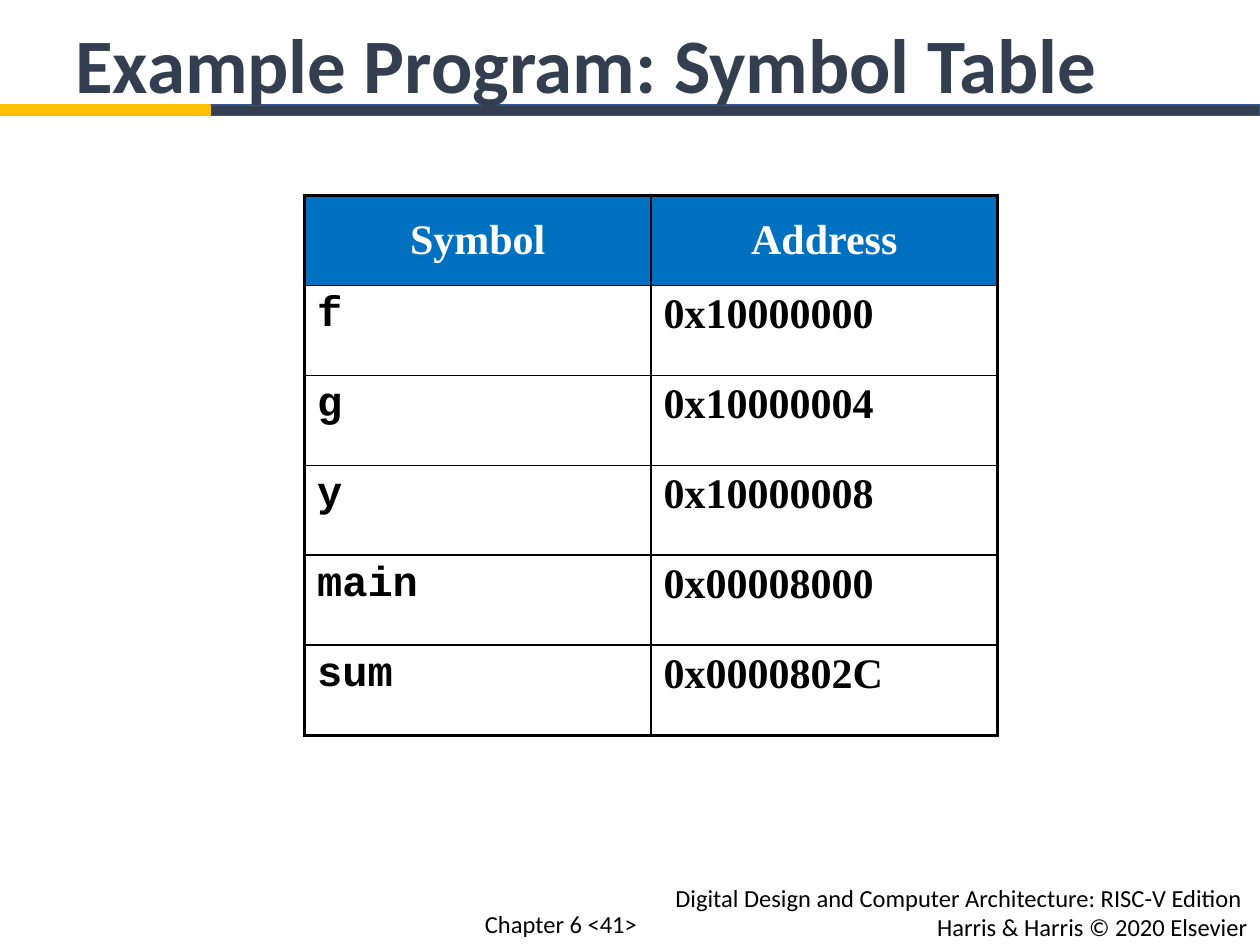
"""Build the symbol table slide of the example program."""
from lxml.etree import SubElement
from pptx import Presentation
from pptx.dml.color import RGBColor
from pptx.enum.shapes import MSO_SHAPE
from pptx.enum.text import MSO_ANCHOR as ANCHOR, PP_ALIGN as ALIGN
from pptx.oxml.ns import qn
from pptx.util import Inches, Pt

WHITE = RGBColor(0xFF, 0xFF, 0xFF)
BLACK = RGBColor(0x00, 0x00, 0x00)
SLATE = RGBColor(0x33, 0x3F, 0x50)
NAVY = RGBColor(0x32, 0x54, 0x91)
GOLD = RGBColor(0xFF, 0xC0, 0x00)
BLUE = RGBColor(0x00, 0x70, 0xC0)

prs = Presentation()
prs.slide_width, prs.slide_height = Inches(10), Inches(7.5)
COL, ROW = prs.slide_width / 120, prs.slide_height / 90
s = prs.slides.add_slide(prs.slide_layouts[6])


def grid(x, y, w, h):
    return int(x * COL), int(y * ROW), int(w * COL), int(h * ROW)


def write(tf, text, size=14, font="Calibri", color=BLACK, bold=False, align=ALIGN.LEFT, indent=0):
    tf.word_wrap = True
    for i, line in enumerate(text.split("\n")):
        p = tf.add_paragraph() if i else tf.paragraphs[0]
        p.alignment = align
        if indent:
            p._p.get_or_add_pPr().set("marL", str(Inches(indent)))
        r = p.add_run()
        r.text = line
        r.font.size, r.font.name, r.font.bold = Pt(size), font, bold
        r.font.color.rgb = color


bars = [
    ((0, 77, 120, 13), WHITE, WHITE),
    ((20, 10, 100, 1), SLATE, NAVY),
    ((0, 10, 20, 1), GOLD, GOLD),
]
for place, fill, line in bars:
    sp = s.shapes.add_shape(MSO_SHAPE.RECTANGLE, *grid(*place))
    sp.shadow.inherit = False
    sp.fill.solid()
    sp.fill.fore_color.rgb = fill
    sp.line.color.rgb = line
    sp.line.width = Pt(1)

texts = [
    ((45, 83.5, 75, 6.9), "Digital Design and Computer Architecture: RISC-V Edition \n"
     "Harris & Harris © 2020 Elsevier", dict(align=ALIGN.RIGHT)),
    ((45, 86, 19, 4), "Chapter 6 <41>", {}),
    ((0, 1, 113, 10), "Example Program: Symbol Table",
     dict(size=44, color=SLATE, bold=True, indent=0.5)),
]
for place, text, fmt in texts:
    write(s.shapes.add_textbox(*grid(*place)).text_frame, text, **fmt)

symbols = [
    ("Symbol", "Address"),
    ("f", "0x10000000"),
    ("g", "0x10000004"),
    ("y", "0x10000008"),
    ("main", "0x00008000"),
    ("sum", "0x0000802C"),
]
last = len(symbols) - 1
table = s.shapes.add_table(len(symbols), 2, *grid(29, 18.6, 66, 51.43)).table
table.first_row = table.horz_banding = False
for i, values in enumerate(symbols):
    for j, value in enumerate(values):
        cell = table.cell(i, j)
        tcPr = cell._tc.get_or_add_tcPr()
        outer = {"lnL": j == 0, "lnR": j == 1, "lnT": i == 0, "lnB": i == last}
        for side, thick in outer.items():
            ln = SubElement(tcPr, qn(f"a:{side}"), w=str(Pt(2.25 if thick else 1)))
            SubElement(SubElement(ln, qn("a:solidFill")), qn("a:srgbClr"), val=str(BLACK))
        fmt = dict(size=24, bold=True, font="Times New Roman")
        if i == 0:
            cell.fill.solid()
            cell.fill.fore_color.rgb = BLUE
            cell.vertical_anchor = ANCHOR.MIDDLE
            fmt.update(color=WHITE, align=ALIGN.CENTER)
        else:
            cell.fill.background()
            if j == 0:
                fmt.update(font="Courier New")
        write(cell.text_frame, value, **fmt)

prs.save("out.pptx")
